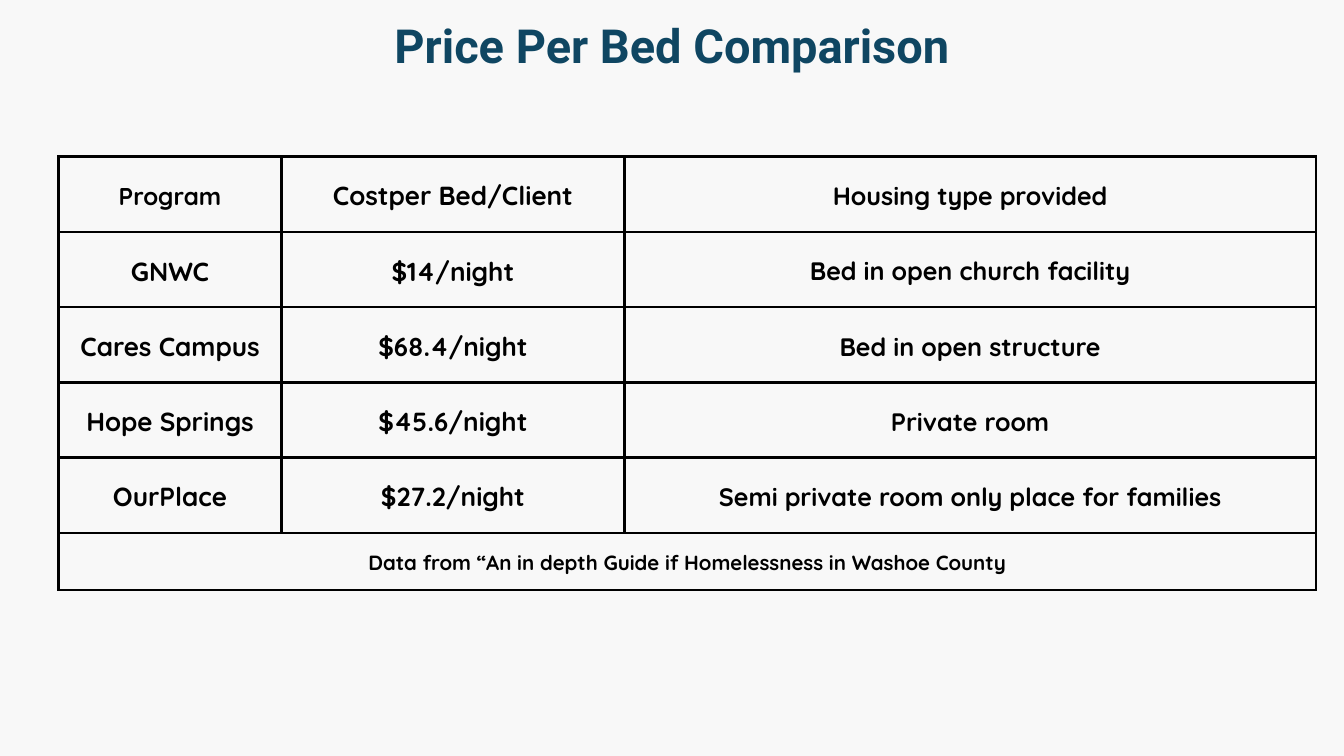
import pptx
import pptx.util
import pptx.dml.color
import pptx.enum.text
import pptx.oxml
import pptx.oxml.ns

Inches = pptx.util.Inches
Pt = pptx.util.Pt
RGB = pptx.dml.color.RGBColor
ALIGN = pptx.enum.text.PP_ALIGN
ANCHOR = pptx.enum.text.MSO_ANCHOR

PAPER = RGB(0xF8, 0xF8, 0xF8)
NAVY = RGB(0x0F, 0x46, 0x62)
BLACK = RGB(0, 0, 0)

ROWS = [
    ("Program", "Costper Bed/Client", "Housing type provided"),
    ("GNWC", "$14/night", "Bed in open church facility"),
    ("Cares Campus", "$68.4/night", "Bed in open structure"),
    ("Hope Springs", "$45.6/night", "Private room"),
    ("OurPlace", "$27.2/night", "Semi private room only place for families"),
    ("Data from “An in depth Guide if Homelessness in Washoe County", "", ""),
]
WIDTHS = [3.32, 5.1, 10.29]
HEIGHTS = [1.12] * 5 + [0.85]
SIZES = [28, 28, 27]


def style(frame, face, size, color):
    """Centre the text, 1.4 lines apart, in one bold font."""
    para = frame.paragraphs[0]
    para.alignment = ALIGN.CENTER
    para.line_spacing = Pt(round(size * 1.4, 1))
    para.font.size = Pt(size)
    for run in para.runs:
        run.font.name = face
        run.font.size = Pt(size)
        run.font.bold = True
        run.font.color.rgb = color


def border(cell):
    props = cell._tc.get_or_add_tcPr()
    for side in "LRTB":
        props.append(pptx.oxml.parse_xml(
            f'<a:ln{side} {pptx.oxml.ns.nsdecls("a")} w="{Pt(3)}">'
            f'<a:solidFill><a:srgbClr val="{BLACK}"/></a:solidFill></a:ln{side}>'))


deck = pptx.Presentation()
deck.slide_width = Inches(20)
deck.slide_height = Inches(11.25)
slide = deck.slides.add_slide(deck.slide_layouts[5])
slide.background.fill.solid()
slide.background.fill.fore_color.rgb = PAPER

title = slide.shapes.title
title.left, title.top = Inches(4.23), Inches(0.1)
title.width, title.height = Inches(11.54), Inches(1.03)
frame = title.text_frame
frame.text = "Price Per Bed Comparison"
frame.margin_left = frame.margin_right = frame.margin_top = frame.margin_bottom = 0
frame.vertical_anchor = ANCHOR.TOP
style(frame, "Roboto", 50.3, NAVY)

table = slide.shapes.add_table(
    len(ROWS), len(WIDTHS), Inches(0.87), Inches(2.33),
    Inches(sum(WIDTHS)), Inches(sum(HEIGHTS))).table
for col, width in zip(table.columns, WIDTHS):
    col.width = Inches(width)
for row, height in zip(table.rows, HEIGHTS):
    row.height = Inches(height)

last = len(ROWS) - 1
table.cell(last, 0).merge(table.cell(last, 2))
for r, texts in enumerate(ROWS):
    for c, text in enumerate(texts):
        cell = table.cell(r, c)
        cell.text_frame.text = text
        cell.vertical_anchor = ANCHOR.MIDDLE
        cell.margin_left = cell.margin_right = Inches(0.21)
        cell.margin_top = cell.margin_bottom = Inches(0.21)
        size = 22 if r == last else 26 if r == c == 0 else SIZES[c]
        style(cell.text_frame, "Quicksand", size, BLACK)
        border(cell)
        cell.fill.background()

deck.save("out.pptx")
